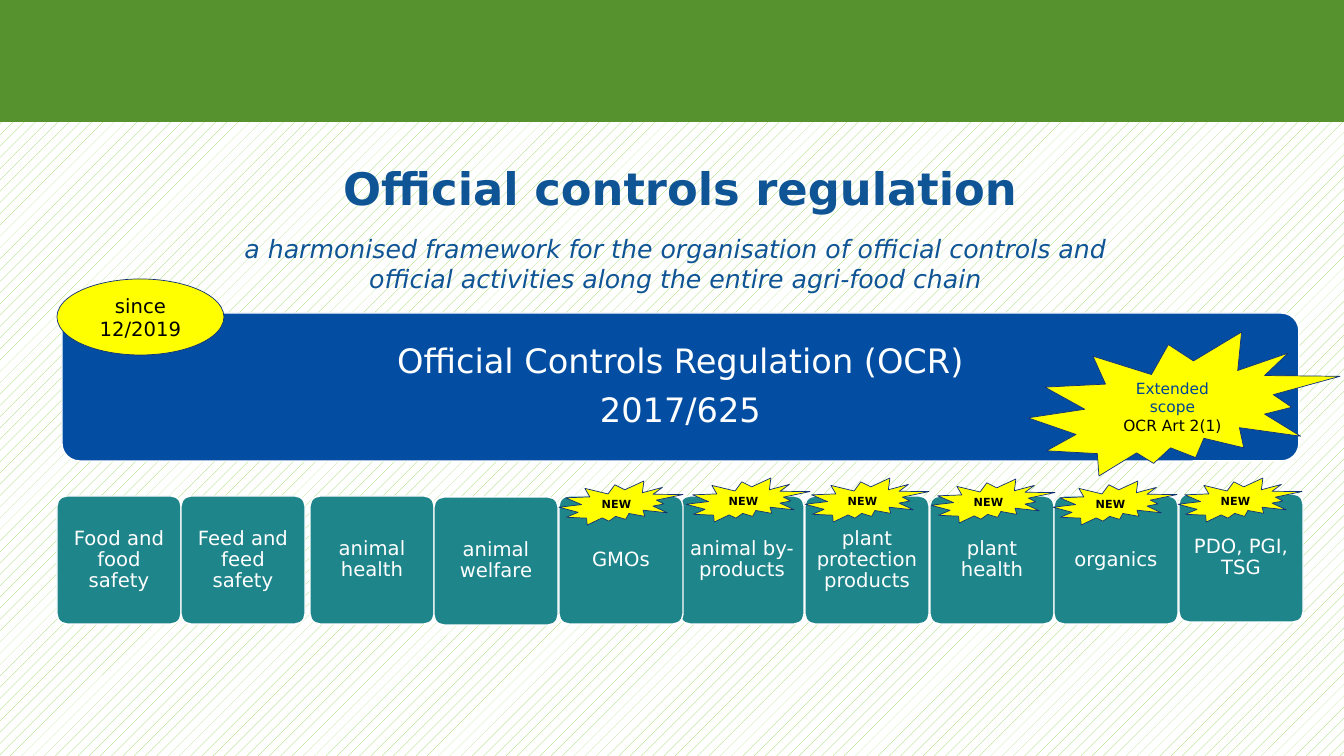
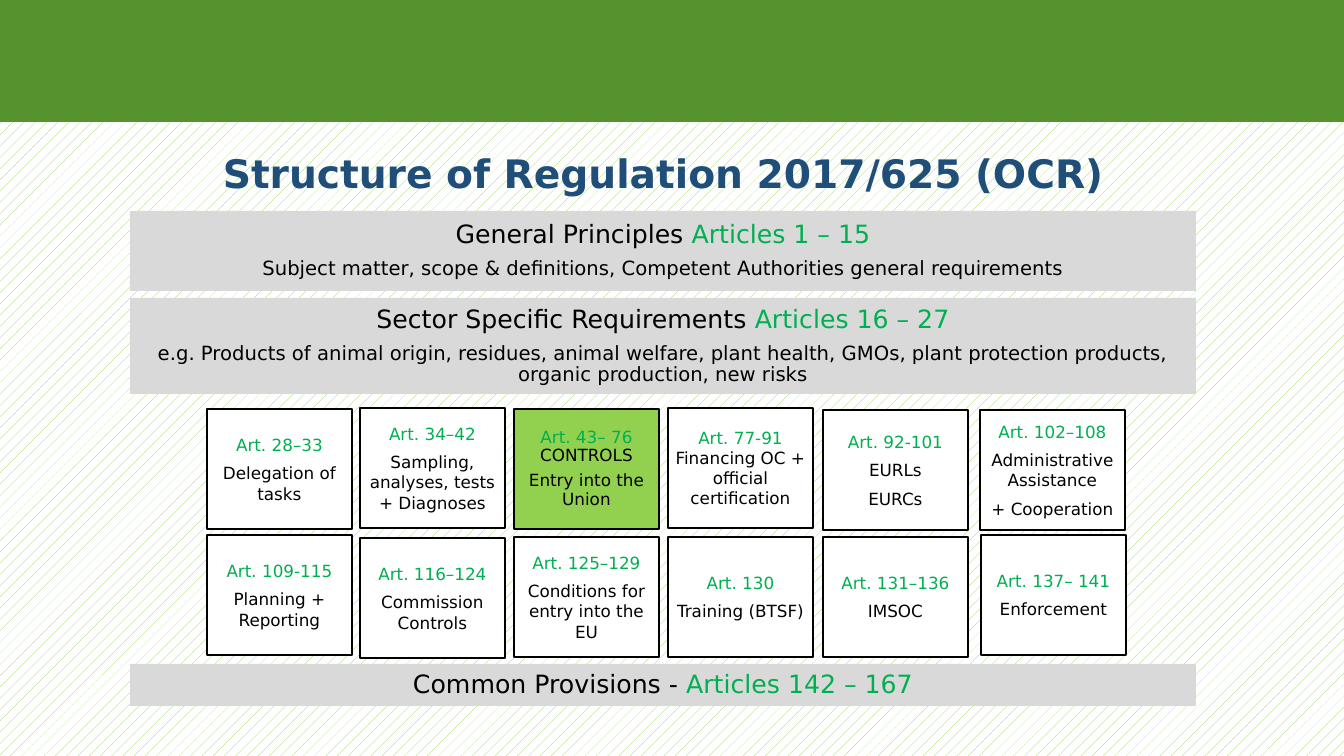
import dataclasses

import pptx
import pptx.dml.color
import pptx.enum.dml
import pptx.enum.shapes
import pptx.enum.text
import pptx.util

SHAPE = pptx.enum.shapes.MSO_SHAPE
ANCHOR = pptx.enum.text.MSO_ANCHOR
EMU_PER_PX = 914400 / 100.8
SLIDE_WIDTH, SLIDE_HEIGHT = 1344, 756


@dataclasses.dataclass(frozen=True)
class Theme:
    font: str = "DejaVu Sans"
    white: str = "FFFFFF"
    black: str = "000000"
    header: str = "56932F"
    light_green: str = "92D050"
    article_green: str = "00B050"
    title_blue: str = "0F5494"
    structure_blue: str = "1F4E79"
    banner_blue: str = "034EA2"
    scope_blue: str = "004494"
    teal: str = "1E858B"
    yellow: str = "FFFF00"
    badge_outline: str = "133176"
    grey: str = "D9D9D9"
    title_size: int = 32
    structure_title_size: int = 28
    banner_size: int = 24
    heading_size: int = 18
    body_size: int = 14
    box_size: int = 12
    scope_size: int = 11
    badge_size: int = 8


THEME = Theme()
TIGHT = {"line_spacing": 0.9, "space_after": 0.38}


@dataclasses.dataclass(frozen=True)
class Run:
    text: str
    color: str
    size: int


def px(length):
    return pptx.util.Emu(round(length * EMU_PER_PX))


def rgb(color):
    return pptx.dml.color.RGBColor.from_string(color)


def write_text(frame, paragraphs, *, anchor=ANCHOR.MIDDLE, bold=False, italic=False,
               line_spacing=None, space_after=0, inset=None):
    """Write lists of runs as centred paragraphs; space_after is a share of the type size."""
    frame.word_wrap = True
    frame.vertical_anchor = anchor
    if inset is not None:
        frame.margin_left = frame.margin_right = px(inset)
        frame.margin_top = frame.margin_bottom = px(inset)
    for index, runs in enumerate(paragraphs):
        paragraph = frame.add_paragraph() if index else frame.paragraphs[0]
        paragraph.alignment = pptx.enum.text.PP_ALIGN.CENTER
        paragraph.space_after = pptx.util.Pt(round(runs[0].size * space_after))
        if line_spacing:
            paragraph.line_spacing = line_spacing
        for item in runs:
            run = paragraph.add_run()
            run.text = item.text
            run.font.name = THEME.font
            run.font.size = pptx.util.Pt(item.size)
            run.font.color.rgb = rgb(item.color)
            run.font.bold = bold
            run.font.italic = italic


class Deck:
    def __init__(self):
        self.presentation = pptx.Presentation()
        self.presentation.slide_width = px(SLIDE_WIDTH)
        self.presentation.slide_height = px(SLIDE_HEIGHT)
        self.slide = None

    def new_slide(self):
        """Start a slide with the patterned background and the green header."""
        self.slide = self.presentation.slides.add_slide(self.presentation.slide_layouts[6])
        fill = self.slide.background.fill
        fill.patterned()
        fill.pattern = pptx.enum.dml.MSO_PATTERN.PERCENT_10
        fill.fore_color.rgb = rgb(THEME.light_green)
        fill.back_color.rgb = rgb(THEME.white)
        self.shape(SHAPE.RECTANGLE, (0, 0, SLIDE_WIDTH, 122), THEME.header)

    def shape(self, kind, box, fill, outline=None, outline_width=1.0):
        shape = self.slide.shapes.add_shape(kind, *map(px, box))
        shape.shadow.inherit = False
        shape.fill.solid()
        shape.fill.fore_color.rgb = rgb(fill)
        if outline:
            shape.line.color.rgb = rgb(outline)
            shape.line.width = pptx.util.Pt(outline_width)
        else:
            shape.line.fill.background()
        return shape

    def text(self, box, content, color, size, **text_format):
        frame = self.slide.shapes.add_textbox(*map(px, box)).text_frame
        write_text(frame, [[Run(content, color, size)]], anchor=ANCHOR.TOP, **text_format)

    def rounded_panel(self, box, fill, radius, lines, size, inset):
        shape = self.shape(SHAPE.ROUNDED_RECTANGLE, box, fill, THEME.white)
        shape.adjustments[0] = radius
        paragraphs = [[Run(line, THEME.white, size)] for line in lines]
        write_text(shape.text_frame, paragraphs, inset=inset, **TIGHT)

    def badge(self, kind, box, paragraphs, bold=False):
        shape = self.shape(kind, box, THEME.yellow, THEME.badge_outline, 0.5)
        write_text(shape.text_frame, paragraphs, bold=bold)

    def chapter_bar(self, top, height, heading, articles, detail=None):
        shape = self.shape(SHAPE.RECTANGLE, (130, top, 1066, height), THEME.grey)
        paragraphs = [[Run(heading + " ", THEME.black, THEME.heading_size),
                       Run(articles, THEME.article_green, THEME.heading_size)]]
        if detail:
            paragraphs.append([Run(detail, THEME.black, THEME.body_size)])
        write_text(shape.text_frame, paragraphs, inset=8, **TIGHT)

    def article_box(self, left, top, articles, lines, inline=False, highlight=False):
        """Draw an article box; inline keeps the first line in the articles' paragraph."""
        fill = THEME.light_green if highlight else THEME.white
        shape = self.shape(SHAPE.RECTANGLE, (left, top, 145, 120), fill, THEME.black)
        paragraphs = [[Run(line, THEME.black, THEME.box_size)] for line in lines]
        if inline:
            paragraphs[0].insert(0, Run(articles + " ", THEME.article_green, THEME.box_size))
        else:
            paragraphs.insert(0, [Run(articles, THEME.article_green, THEME.box_size)])
        spacing = TIGHT if highlight else {"space_after": 0.5}
        write_text(shape.text_frame, paragraphs, inset=4, **spacing)


# Text, left and top of each card.
SECTOR_CARDS = [
    ("Food and food safety", 57, 496),
    ("Feed and feed safety", 181, 496),
    ("animal health", 310, 496),
    ("animal welfare", 434, 497),
    ("animal by-products", 680, 496),
    ("GMOs", 559, 496),
    ("plant protection products", 805, 496),
    ("plant health", 930, 496),
    ("organics", 1054, 496),
    ("PDO, PGI, TSG", 1179, 494),
]
NEW_BADGES = [(559, 481), (686, 478), (805, 478), (931, 479), (1053, 481), (1178, 478)]

# Left, top, articles and lines of each box.
ARTICLE_BOXES = [
    (207, 409, "Art. 28–33", ["Delegation of tasks"]),
    (360, 408, "Art. 34–42", ["Sampling, analyses, tests + Diagnoses"]),
    (514, 409, "Art. 43– 76", ["CONTROLS", "Entry into the Union"], True, True),
    (668, 408, "Art. 77-91", ["Financing OC + official certification"], True),
    (823, 410, "Art. 92-101", ["EURLs", "EURCs"]),
    (980, 410, "Art. 102–108", ["Administrative Assistance", "+ Cooperation"]),
    (207, 535, "Art. 109-115", ["Planning + Reporting"]),
    (360, 538, "Art. 116–124", ["Commission Controls"]),
    (514, 537, "Art. 125–129", ["Conditions for entry into the EU"]),
    (668, 537, "Art. 130", ["Training (BTSF)"]),
    (823, 537, "Art. 131–136", ["IMSOC"]),
    (981, 535, "Art. 137– 141", ["Enforcement"]),
]


def build_scope_slide(deck):
    deck.new_slide()
    deck.text((62, 156, 1237, 65), "Official controls regulation",
              THEME.title_blue, THEME.title_size, bold=True)
    deck.text((231, 228, 889, 72),
              "a harmonised framework for the organisation of official controls and "
              "official activities along the entire agri-food chain",
              THEME.title_blue, THEME.heading_size, italic=True)
    deck.rounded_panel((62, 313, 1237, 148), THEME.banner_blue, 0.12,
                       ["Official Controls Regulation (OCR)", "2017/625"],
                       THEME.banner_size, 23)
    for label, left, top in SECTOR_CARDS:
        deck.rounded_panel((left, top, 124, 128), THEME.teal, 0.08,
                           [label], THEME.body_size, 6)
    deck.badge(SHAPE.EXPLOSION2, (1028, 332, 312, 144),
               [[Run("Extended scope", THEME.scope_blue, THEME.scope_size)],
                [Run("OCR Art 2(1)", THEME.black, THEME.scope_size)]])
    for left, top in NEW_BADGES:
        deck.badge(SHAPE.EXPLOSION2, (left, top, 124, 44),
                   [[Run("NEW", THEME.black, THEME.badge_size)]], bold=True)
    deck.badge(SHAPE.OVAL, (57, 279, 167, 76),
               [[Run("since 12/2019", THEME.black, THEME.body_size)]])


def build_structure_slide(deck):
    deck.new_slide()
    deck.text((130, 144, 1066, 60), "Structure of Regulation 2017/625 (OCR)",
              THEME.structure_blue, THEME.structure_title_size, bold=True)
    deck.chapter_bar(211, 80, "General Principles", "Articles 1 – 15",
                     "Subject matter, scope & definitions, Competent Authorities "
                     "general requirements")
    deck.chapter_bar(298, 96, "Sector Specific Requirements", "Articles 16 – 27",
                     "e.g. Products of animal origin, residues, animal welfare, plant health, "
                     "GMOs, plant protection products, organic production, new risks")
    for article_box in ARTICLE_BOXES:
        deck.article_box(*article_box)
    deck.chapter_bar(664, 42, "Common Provisions -", "Articles 142 – 167")


def main():
    deck = Deck()
    build_scope_slide(deck)
    build_structure_slide(deck)
    deck.presentation.save("out.pptx")


if __name__ == "__main__":
    main()
